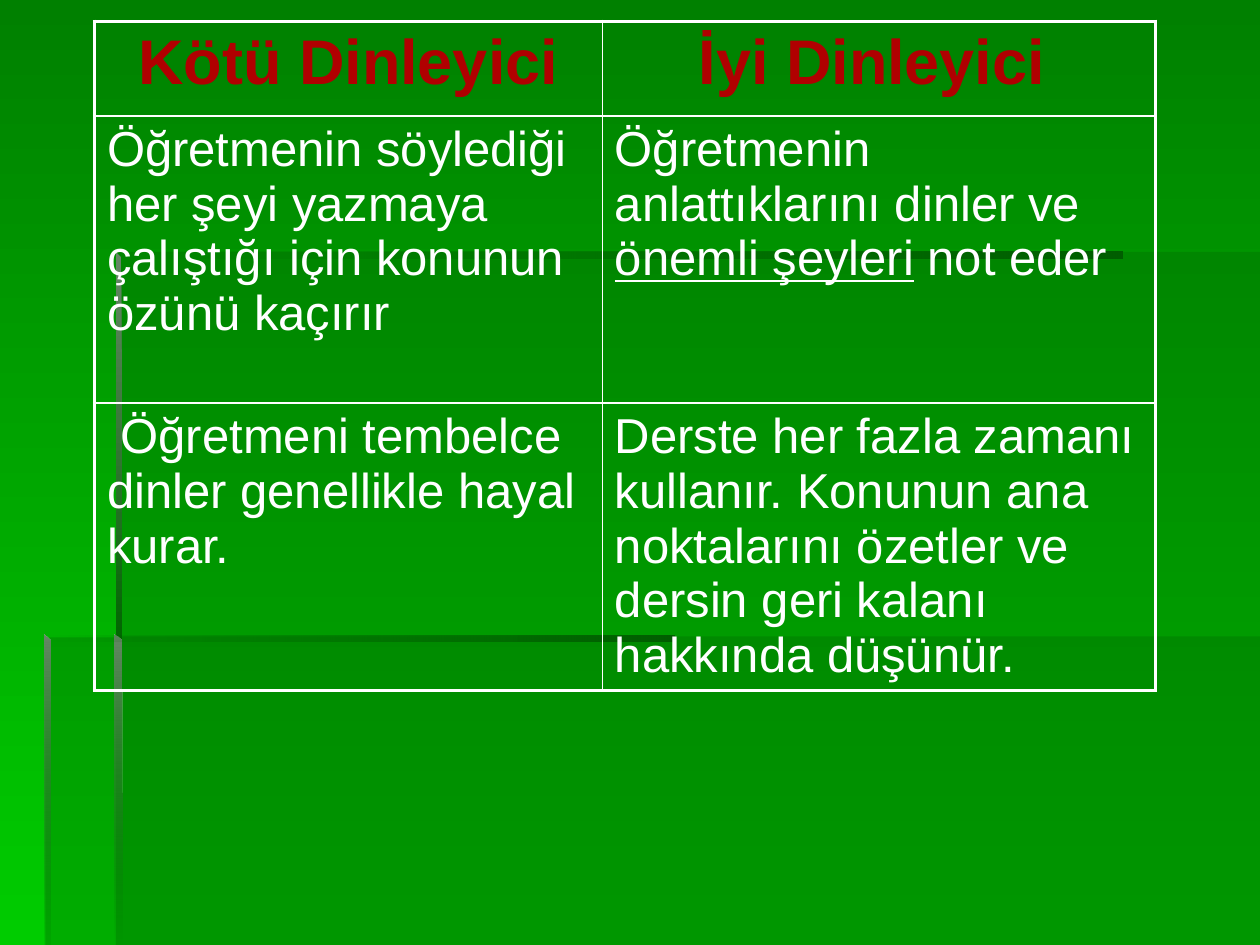
from lxml import etree
from pptx import Presentation
from pptx.dml.color import RGBColor
from pptx.enum import text
from pptx.oxml.ns import qn
from pptx.util import Inches, Pt

COLORS = {
    "top": "008000", "bottom": "00CC00", "panel": "006600", "shade": "005E00",
    "edge": "668666", "heading": "B00000", "white": "FFFFFF",
}
FONT = "Arial"
DOWN, RIGHT = 270, 0
THICK, THIN = 2.25, 1

PANELS = [
    [(0.92, 5.05), (0.92, 7.5), (10, 7.5), (10, 5.05)],
    [(0.94, 5.06), (0.36, 5.06), (0.36, 7.5), (10, 7.5), (10, 2), (0.94, 2)],
]
BARS = [
    ([(0.92, 2), (0.92, 2.05), (8.91, 2.05), (8.91, 2)],
     ("panel", 0), ("shade", 100), RIGHT),
    ([(0.92, 2), (0.92, 5.1), (0.97, 5.1), (0.96, 2.04)],
     ("edge", 100), ("panel", 100), DOWN),
    ([(0.91, 7.5), (0.97, 7.5), (0.96, 5.08), (0.91, 5.04)],
     ("edge", 100), ("panel", 0), DOWN),
    ([(0.35, 5.04), (0.35, 5.09), (5.35, 5.09), (5.35, 5.04)],
     ("panel", 0), ("shade", 100), RIGHT),
    ([(0.35, 5.04), (0.35, 7.5), (0.4, 7.5), (0.4, 5.09)],
     ("edge", 100), ("panel", 10), DOWN),
]
COLUMN_WIDTHS = [4.03, 4.39]
ROW_HEIGHTS = [0.75, 2.28, 2.28]
HEADINGS = ["Kötü Dinleyici", "İyi Dinleyici"]
LISTENERS = [
    [["Öğretmenin söylediği her şeyi yazmaya çalıştığı için konunun özünü kaçırır"],
     ["Öğretmenin anlattıklarını dinler ve ", "önemli şeyleri", " not eder"]],
    [[" Öğretmeni tembelce dinler genellikle hayal kurar."],
     ["Derste her fazla zamanı kullanır. Konunun ana noktalarını özetler "
      "ve dersin geri kalanı hakkında düşünür."]],
]


def rgb(name):
    """Return the named colour."""
    return RGBColor.from_string(COLORS[name])


def set_gradient(fill, start, end, angle):
    """Fill with a two-stop linear gradient."""
    fill.gradient()
    fill.gradient_angle = angle
    for stop, name in zip(fill.gradient_stops, (start, end)):
        stop.color.rgb = rgb(name)


def set_opacity(shape, *percents):
    """Give the fill colours of a shape their opacities in order."""
    for color, percent in zip(shape._element.spPr.iter(qn("a:srgbClr")), percents):
        etree.SubElement(color, qn("a:alpha"), val=str(percent * 1000))


def add_outline(slide, points):
    """Add a closed shape without line or shadow."""
    corners = [(Inches(x), Inches(y)) for x, y in points]
    builder = slide.shapes.build_freeform(*corners[0])
    builder.add_line_segments(corners[1:], close=True)
    shape = builder.convert_to_shape()
    shape.shadow.inherit = False
    shape.line.fill.background()
    return shape


def add_panel(slide, points):
    """Add a translucent panel."""
    shape = add_outline(slide, points)
    shape.fill.solid()
    shape.fill.fore_color.rgb = rgb("panel")
    set_opacity(shape, 30)


def add_bar(slide, points, start, end, angle):
    """Add a narrow fading bar."""
    shape = add_outline(slide, points)
    set_gradient(shape.fill, start[0], end[0], angle)
    set_opacity(shape, start[1], end[1])


def set_borders(cell, widths):
    """Draw white left, right, top and bottom borders on a cell."""
    properties = cell._tc.get_or_add_tcPr()
    for side, width in zip("LRTB", widths):
        line = etree.SubElement(properties, qn(f"a:ln{side}"), w=str(Pt(width)))
        fill = etree.SubElement(line, qn("a:solidFill"))
        etree.SubElement(fill, qn("a:srgbClr"), val=COLORS["white"])


def write_cell(cell, parts, size, color, bold=False):
    """Write the parts of a cell, underlining every second one."""
    paragraph = cell.text_frame.paragraphs[0]
    font = paragraph.font
    font.name, font.size, font.bold = FONT, Pt(size), bold
    font.color.rgb = rgb(color)
    for index, part in enumerate(parts):
        run = paragraph.add_run()
        run.text = part
        if index % 2:
            run.font.underline = True
    return paragraph


def add_listener_table(slide):
    """Add the table that compares bad and good listeners."""
    rows, columns = len(ROW_HEIGHTS), len(COLUMN_WIDTHS)
    table = slide.shapes.add_table(
        rows, columns, Inches(0.75), Inches(0.17),
        Inches(sum(COLUMN_WIDTHS)), Inches(sum(ROW_HEIGHTS))).table
    table.first_row = table.horz_banding = False
    for column, width in zip(table.columns, COLUMN_WIDTHS):
        column.width = Inches(width)
    for row, height in zip(table.rows, ROW_HEIGHTS):
        row.height = Inches(height)
    for r in range(rows):
        for c in range(columns):
            cell = table.cell(r, c)
            outer = (c == 0, c == columns - 1, r == 0, r == rows - 1)
            set_borders(cell, [THICK if edge else THIN for edge in outer])
            cell.fill.background()
            if r:
                write_cell(cell, LISTENERS[r - 1][c], 28, "white")
            else:
                heading = write_cell(cell, [HEADINGS[c]], 36, "heading", True)
                heading.alignment = text.PP_ALIGN.CENTER
    space = table.cell(0, 1).text_frame.paragraphs[0].add_run()
    space.text = " "
    space.font.size, space.font.bold = Pt(28), False


def main():
    """Build and save the slide."""
    presentation = Presentation()
    presentation.slide_width, presentation.slide_height = Inches(10), Inches(7.5)
    slide = presentation.slides.add_slide(presentation.slide_layouts[6])
    set_gradient(slide.background.fill, "top", "bottom", DOWN)
    for points in PANELS:
        add_panel(slide, points)
    for bar in BARS:
        add_bar(slide, *bar)
    add_listener_table(slide)
    presentation.save("out.pptx")


if __name__ == "__main__":
    main()
